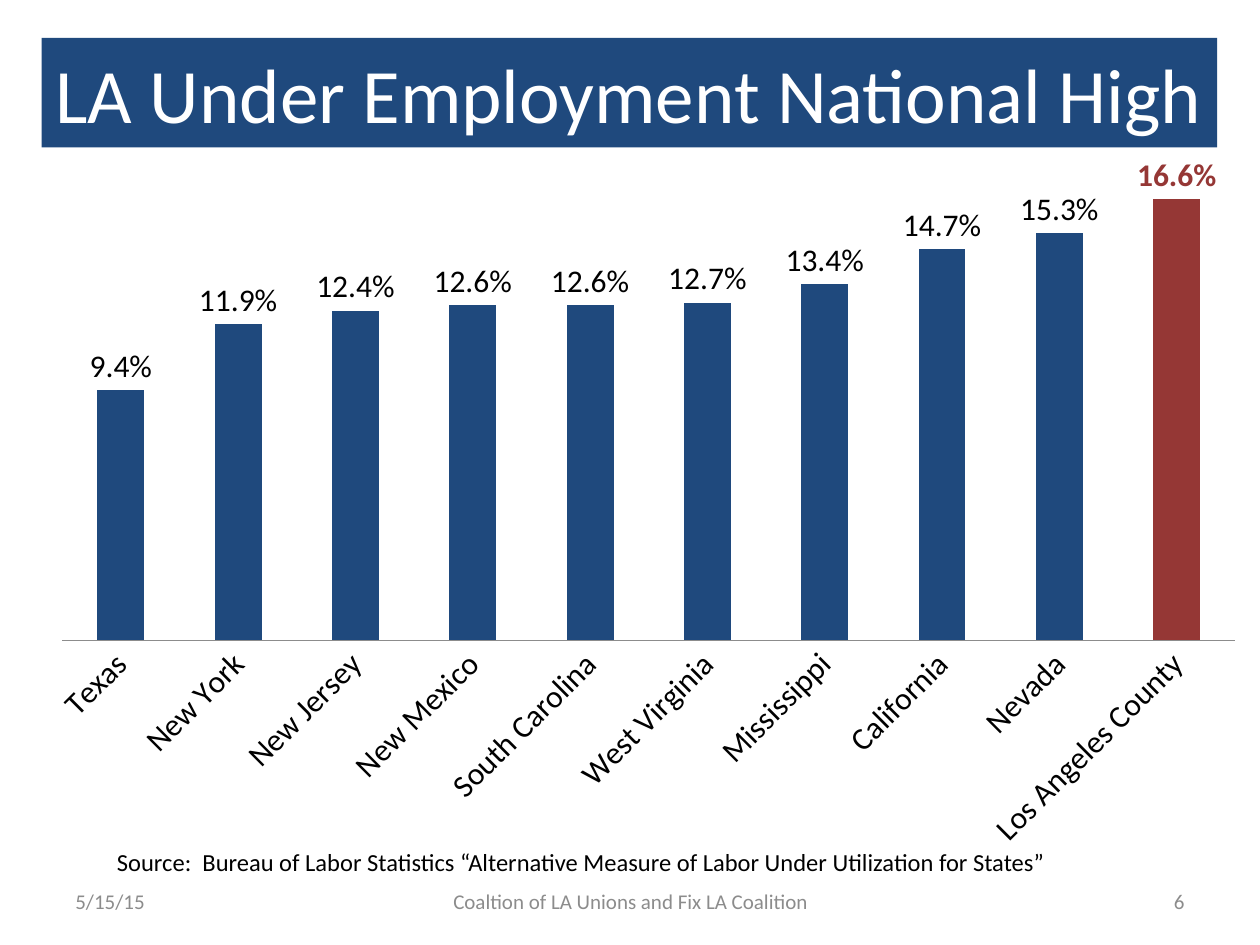
from dataclasses import dataclass

from lxml.etree import SubElement
from pptx import Presentation
from pptx.chart.data import CategoryChartData
from pptx.dml.color import RGBColor
from pptx.enum.chart import XL_CHART_TYPE, XL_LABEL_POSITION, XL_TICK_MARK
from pptx.enum.shapes import MSO_SHAPE
from pptx.enum.text import MSO_ANCHOR, PP_ALIGN
from pptx.oxml.ns import qn
from pptx.util import Inches, Pt


@dataclass(frozen=True)
class Theme:
    font: str = "Calibri"
    navy: str = "1F497D"
    red: str = "953735"
    gray: str = "8C8C8C"
    black: str = "000000"
    white: str = "FFFFFF"
    title_size: int = 44
    chart_size: int = 18
    source_size: int = 14
    footer_size: int = 12


RATES = {
    "Texas": 0.094,
    "New York": 0.119,
    "New Jersey": 0.124,
    "New Mexico": 0.126,
    "South Carolina": 0.126,
    "West Virginia": 0.127,
    "Mississippi": 0.134,
    "California": 0.147,
    "Nevada": 0.153,
    "Los Angeles County": 0.166,
}
RATE_FORMAT = "0.0%"


def style_font(font, theme, size, color, bold=False):
    font.name = theme.font
    font.size = Pt(size)
    font.bold = bold
    font.color.rgb = RGBColor.from_string(color)


def write_text(frame, text, theme, *, size, color, align=PP_ALIGN.LEFT,
               anchor=MSO_ANCHOR.MIDDLE):
    frame.word_wrap = True
    frame.vertical_anchor = anchor
    paragraph = frame.paragraphs[0]
    paragraph.alignment = align
    run = paragraph.add_run()
    run.text = text
    style_font(run.font, theme, size, color)


def place_plot(chart, **fractions):
    """Fix the inner plot area, as fractions of the chart frame."""
    plot_area = chart.element.xpath(".//c:plotArea")[0]
    for old_layout in plot_area.findall(qn("c:layout")):
        plot_area.remove(old_layout)
    layout = plot_area.makeelement(qn("c:layout"))
    plot_area.insert(0, layout)
    manual = SubElement(layout, qn("c:manualLayout"))
    settings = {"layoutTarget": "inner", "xMode": "edge", "yMode": "edge"}
    for name, value in (settings | fractions).items():
        SubElement(manual, qn(f"c:{name}")).set("val", str(value))


class SlideBuilder:
    def __init__(self, slide, theme):
        self.slide = slide
        self.theme = theme

    def banner(self, text, left, top, width, height):
        shape = self.slide.shapes.add_shape(
            MSO_SHAPE.RECTANGLE, Inches(left), Inches(top), Inches(width), Inches(height))
        shape.shadow.inherit = False
        shape.fill.solid()
        shape.fill.fore_color.rgb = RGBColor.from_string(self.theme.navy)
        shape.line.fill.background()
        write_text(shape.text_frame, text, self.theme, size=self.theme.title_size,
                   color=self.theme.white, align=PP_ALIGN.CENTER)

    def text(self, text, left, top, width, height, **text_format):
        shape = self.slide.shapes.add_textbox(
            Inches(left), Inches(top), Inches(width), Inches(height))
        write_text(shape.text_frame, text, self.theme, **text_format)

    def column_chart(self, rates, highlight, left, top, width, height):
        theme = self.theme
        data = CategoryChartData(number_format=RATE_FORMAT)
        data.categories = list(rates)
        data.add_series("Series 1", list(rates.values()))
        chart = self.slide.shapes.add_chart(
            XL_CHART_TYPE.COLUMN_CLUSTERED, Inches(left), Inches(top),
            Inches(width), Inches(height), data).chart
        chart.has_legend = False
        chart.has_title = False
        style_font(chart.font, theme, theme.chart_size, theme.black)
        place_plot(chart, x=0.025, y=0.02, w=0.955, h=0.67)
        self.style_axes(chart)
        self.style_columns(chart.plots[0], rates, highlight)

    def style_axes(self, chart):
        theme = self.theme
        value_axis = chart.value_axis
        value_axis.minimum_scale = 0
        value_axis.maximum_scale = 0.18
        value_axis.has_major_gridlines = False
        value_axis.visible = False

        category_axis = chart.category_axis
        category_axis.major_tick_mark = XL_TICK_MARK.NONE
        category_axis.format.line.color.rgb = RGBColor.from_string(theme.gray)
        category_axis.format.line.width = Pt(0.75)
        style_font(category_axis.tick_labels.font, theme, theme.chart_size, theme.black)
        body = chart.element.xpath(".//c:catAx/c:txPr/a:bodyPr")[0]
        body.set("rot", str(-45 * 60000))
        body.set("vert", "horz")

    def style_columns(self, plot, rates, highlight):
        theme = self.theme
        plot.gap_width = 150
        plot.vary_by_categories = False
        series = plot.series[0]
        series.format.fill.solid()
        series.format.fill.fore_color.rgb = RGBColor.from_string(theme.navy)

        labels = series.data_labels
        labels.show_value = True
        labels.number_format = RATE_FORMAT
        labels.number_format_is_linked = False
        labels.position = XL_LABEL_POSITION.OUTSIDE_END
        style_font(labels.font, theme, theme.chart_size, theme.black)

        point = series.points[list(rates).index(highlight)]
        point.format.fill.solid()
        point.format.fill.fore_color.rgb = RGBColor.from_string(theme.red)
        run = point.data_label.text_frame.paragraphs[0].add_run()
        run.text = f"{rates[highlight]:.1%}"
        style_font(run.font, theme, theme.chart_size, theme.red, bold=True)
        point.data_label.position = XL_LABEL_POSITION.OUTSIDE_END


def main():
    presentation = Presentation()
    presentation.slide_width = Inches(10)
    presentation.slide_height = Inches(7.5)
    theme = Theme()
    slide = presentation.slides.add_slide(presentation.slide_layouts[6])
    builder = SlideBuilder(slide, theme)

    builder.banner("LA Under Employment National High", 0.33, 0.3, 9.33, 0.87)
    footers = (
        ("5/15/15", 0.5, 2.33, PP_ALIGN.LEFT),
        ("Coaltion of LA Unions and Fix LA Coalition", 3.42, 3.17, PP_ALIGN.CENTER),
        ("6", 7.17, 2.33, PP_ALIGN.RIGHT),
    )
    for text, left, width, align in footers:
        builder.text(text, left, 6.95, width, 0.4, size=theme.footer_size,
                     color=theme.gray, align=align)
    builder.column_chart(RATES, "Los Angeles County", 0.25, 1.17, 9.75, 5.67)
    builder.text(
        "Source:  Bureau of Labor Statistics “Alternative Measure of Labor Under "
        "Utilization for States”",
        0.83, 6.67, 8.73, 0.34, size=theme.source_size, color=theme.black,
        anchor=MSO_ANCHOR.TOP)
    presentation.save("out.pptx")


if __name__ == "__main__":
    main()
